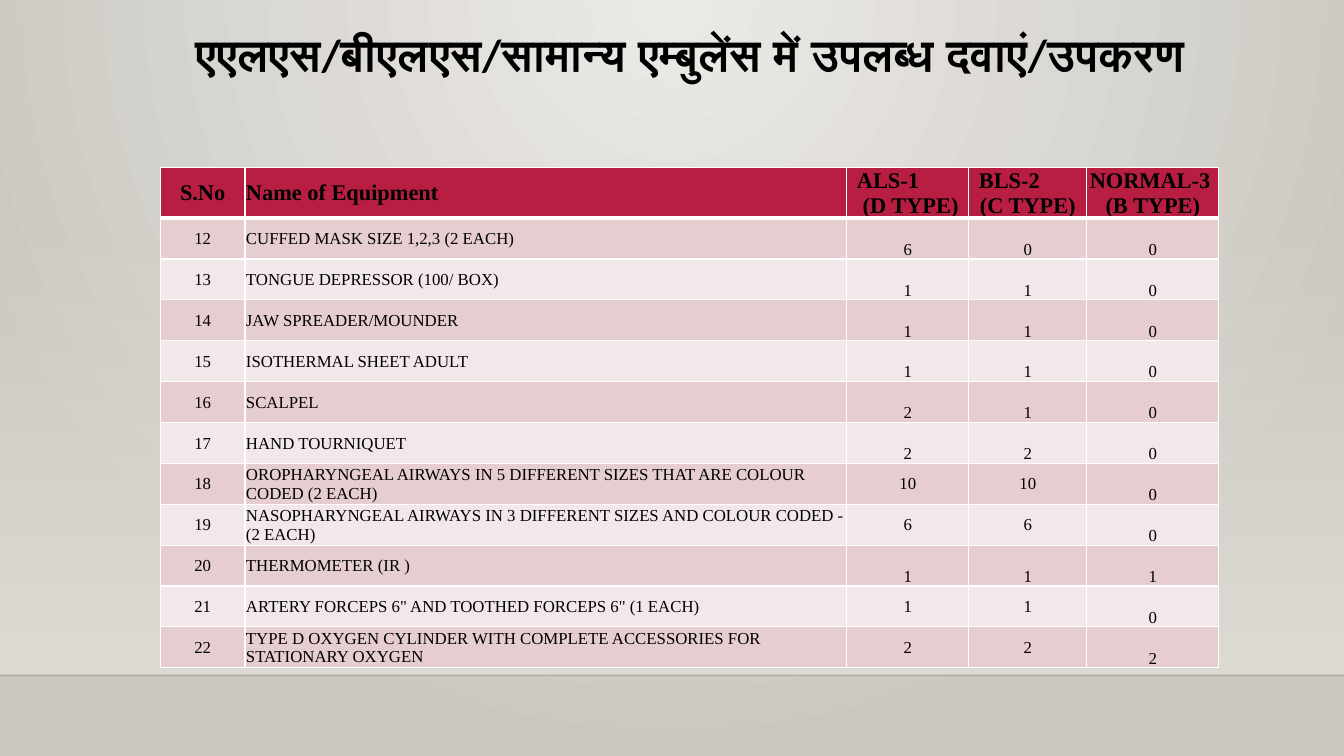
from pptx import Presentation
from pptx.dml.color import RGBColor
from pptx.enum.shapes import MSO_CONNECTOR, MSO_SHAPE
from pptx.enum.text import MSO_ANCHOR, MSO_AUTO_SIZE, PP_ALIGN
from pptx.oxml import parse_xml
from pptx.oxml.ns import qn
from pptx.util import Inches, Pt

TOP, MIDDLE, BOTTOM = MSO_ANCHOR.TOP, MSO_ANCHOR.MIDDLE, MSO_ANCHOR.BOTTOM
LEFT, CENTER = PP_ALIGN.LEFT, PP_ALIGN.CENTER
STRAIGHT, RECTANGLE = MSO_CONNECTOR.STRAIGHT, MSO_SHAPE.RECTANGLE

THEME = {
    "title_font": "Calibri", "table_font": "Times New Roman",
    "title_size": 32, "header_size": 16, "body_size": 12,
    "text": "000000", "header": "B71E42", "bands": ("E6CDCF", "F3E8E9"),
    "border": "FFFFFF", "glow": "ECEAE7", "edge": "CAC7C1",
    "floor": "DFDBD5", "horizon": "000001",
}
NAMESPACE = 'xmlns:a="http://schemas.openxmlformats.org/drawingml/2006/main"'
WIDTH, HEIGHT = 13.33, 7.5
TABLE_LEFT, TABLE_TOP, TABLE_WIDTH = 1.59, 1.66, 10.5
COLUMNS = (0.84, 5.97, 1.21, 1.17, 1.31)
ROW_HEIGHT = 4.87 / 12
HORIZON = 6.7

HEADERS = (
    ("S.No",), ("Name of Equipment",), ("ALS-1", " (D TYPE)"),
    ("BLS-2", "(C TYPE)"), ("NORMAL-3 ", "(B TYPE)"),
)
FIRST_NUMBER = 12
# Name, ALS, BLS and normal counts, anchor of the ALS and BLS counts
EQUIPMENT = (
    ("CUFFED MASK SIZE 1,2,3 (2 EACH)", 6, 0, 0, BOTTOM),
    ("TONGUE DEPRESSOR (100/ BOX)", 1, 1, 0, BOTTOM),
    ("JAW SPREADER/MOUNDER", 1, 1, 0, BOTTOM),
    ("ISOTHERMAL SHEET ADULT", 1, 1, 0, BOTTOM),
    ("SCALPEL", 2, 1, 0, BOTTOM),
    ("HAND TOURNIQUET", 2, 2, 0, BOTTOM),
    ("OROPHARYNGEAL AIRWAYS IN 5 DIFFERENT SIZES THAT ARE COLOUR CODED (2 EACH)",
     10, 10, 0, MIDDLE),
    ("NASOPHARYNGEAL AIRWAYS IN 3 DIFFERENT SIZES AND COLOUR CODED -(2 EACH)",
     6, 6, 0, MIDDLE),
    ("THERMOMETER (IR )", 1, 1, 1, BOTTOM),
    ('ARTERY FORCEPS 6" AND TOOTHED FORCEPS 6" (1 EACH)', 1, 1, 0, MIDDLE),
    ("TYPE D OXYGEN CYLINDER WITH COMPLETE ACCESSORIES FOR STATIONARY OXYGEN",
     2, 2, 2, MIDDLE),
)


def set_gradient(fill_parent, start, end, start_alpha, direction):
    """Replace the solid fill of an element by a two-stop gradient."""
    solid = fill_parent.find(qn("a:solidFill"))
    fill_parent.replace(solid, parse_xml(
        f'<a:gradFill {NAMESPACE} rotWithShape="1"><a:gsLst>'
        f'<a:gs pos="0"><a:srgbClr val="{start}"><a:alpha val="{start_alpha}"/>'
        f'</a:srgbClr></a:gs><a:gs pos="100000"><a:srgbClr val="{end}"/></a:gs>'
        f'</a:gsLst>{direction}</a:gradFill>'))


def add_span(para, text, font, size, bold):
    span = para.add_run()
    span.text = text
    span.font.name, span.font.size, span.font.bold = font, Pt(size), bold
    span.font.color.rgb = RGBColor.from_string(THEME["text"])


deck = Presentation()
deck.slide_width, deck.slide_height = Inches(WIDTH), Inches(HEIGHT)
page = deck.slides.add_slide(deck.slide_layouts[5])

# Backdrop
page.background.fill.solid()
set_gradient(
    page.element.find(".//" + qn("p:bgPr")), THEME["glow"], THEME["edge"], 100000,
    '<a:path path="circle"><a:fillToRect l="43000" t="0" r="43000" b="100000"/></a:path>')
floor = page.shapes.add_shape(
    RECTANGLE, 0, Inches(2.21), Inches(WIDTH), Inches(HORIZON - 2.21))
floor.shadow.inherit = False
floor.line.fill.background()
floor.fill.solid()
set_gradient(floor.element.spPr, THEME["floor"], THEME["floor"], 0,
             '<a:lin ang="5400000" scaled="0"/>')
horizon = page.shapes.add_connector(
    STRAIGHT, 0, Inches(HORIZON), Inches(WIDTH), Inches(HORIZON))
horizon.line.width = Pt(1)
horizon.line.color.rgb = RGBColor.from_string(THEME["horizon"])
horizon.element.find(".//" + qn("a:srgbClr")).append(
    parse_xml(f'<a:alpha {NAMESPACE} val="20000"/>'))
horizon.element.spPr.append(parse_xml(f"<a:effectLst {NAMESPACE}/>"))

# Title
title = page.shapes.title
title.left, title.top = Inches(TABLE_LEFT), Inches(0.28)
title.width, title.height = Inches(TABLE_WIDTH), Inches(1.15)
title.text_frame.word_wrap = True
title.text_frame.auto_size = MSO_AUTO_SIZE.NONE
title.text_frame.vertical_anchor = TOP
para = title.text_frame.paragraphs[0]
para.alignment, para.line_spacing = CENTER, 0.9
add_span(para, "एएलएस/बीएलएस/सामान्य एम्बुलेंस में उपलब्ध दवाएं/उपकरण",
         THEME["title_font"], THEME["title_size"], True)

# Equipment table
rows = [HEADERS]
for number, (name, als, bls, normal, anchor) in enumerate(EQUIPMENT, FIRST_NUMBER):
    rows.append([(str(value),) for value in (number, name, als, bls, normal)])
table = page.shapes.add_table(
    len(rows), len(COLUMNS), Inches(TABLE_LEFT), Inches(TABLE_TOP),
    Inches(TABLE_WIDTH), Inches(ROW_HEIGHT * len(rows))).table
table.first_row = table.horz_banding = False
for column, width in zip(table.columns, COLUMNS):
    column.width = Inches(width)

for row_index, row in enumerate(rows):
    table.rows[row_index].height = Inches(ROW_HEIGHT)
    is_header = row_index == 0
    color = THEME["header"] if is_header else THEME["bands"][(row_index - 1) % 2]
    size = THEME["header_size"] if is_header else THEME["body_size"]
    count_anchor = MIDDLE if is_header else EQUIPMENT[row_index - 1][-1]
    anchors = (MIDDLE, MIDDLE, count_anchor, count_anchor, BOTTOM)
    for column_index, lines in enumerate(row):
        cell = table.cell(row_index, column_index)
        cell.margin_left = cell.margin_right = cell.margin_top = Inches(0.01)
        cell.margin_bottom = 0
        cell.vertical_anchor = anchors[column_index]
        properties = cell._tc.get_or_add_tcPr()
        for side in "LRTB":
            is_thick = (row_index, side) in ((0, "B"), (1, "T"))
            properties.append(parse_xml(
                f'<a:ln{side} {NAMESPACE} w="{Pt(3 if is_thick else 1)}"><a:solidFill>'
                f'<a:srgbClr val="{THEME["border"]}"/></a:solidFill></a:ln{side}>'))
        cell.fill.solid()
        cell.fill.fore_color.rgb = RGBColor.from_string(color)
        frame = cell.text_frame
        for line_index, line in enumerate(lines):
            para = frame.add_paragraph() if line_index else frame.paragraphs[0]
            para.alignment = LEFT if column_index == 1 else CENTER
            if line in ("ALS-1", "BLS-2"):
                para.alignment = LEFT
                para._p.get_or_add_pPr().set("marL", str(Inches(0.09)))
            add_span(para, line, THEME["table_font"], size, is_header)

deck.save("out.pptx")
